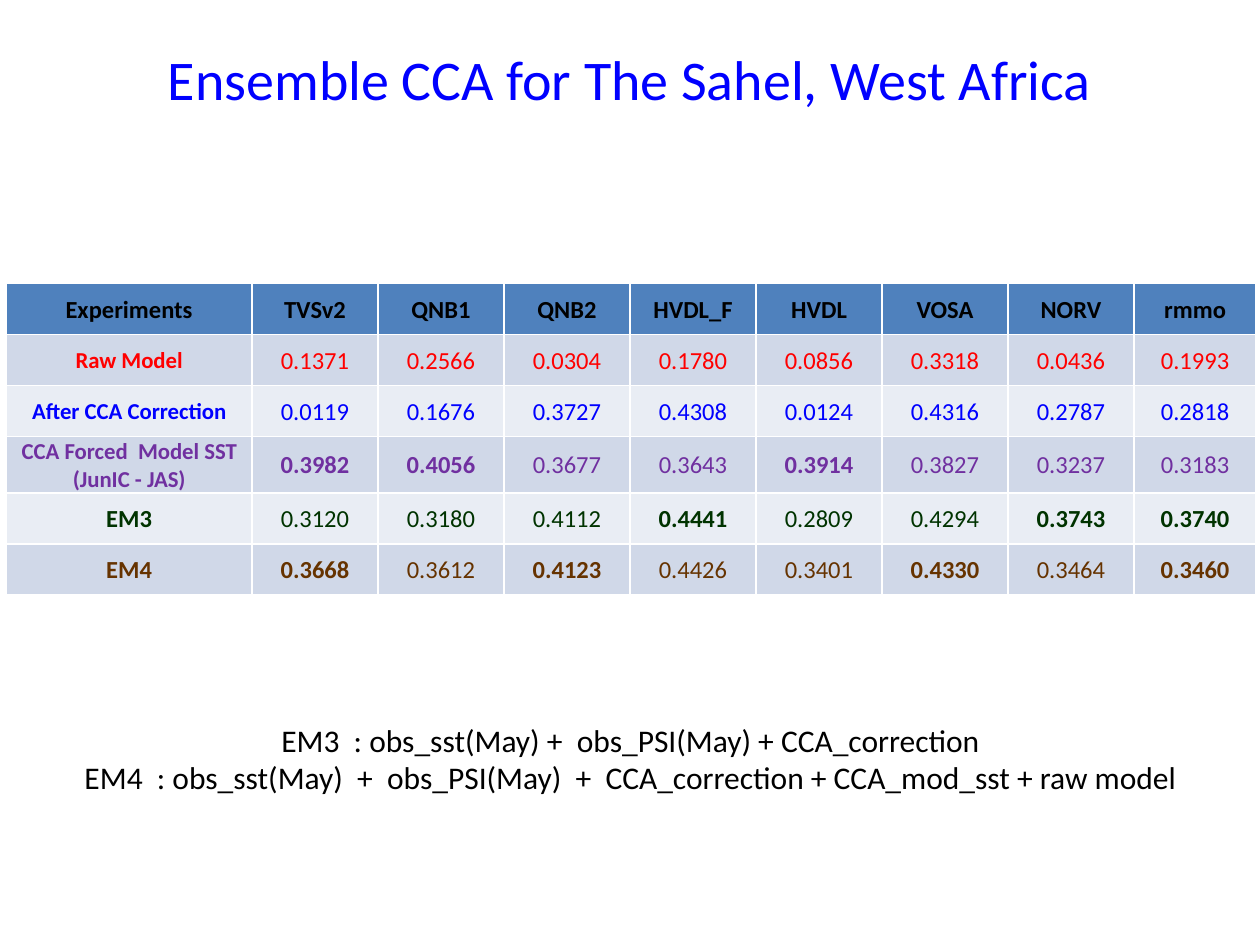
"""Build the Sahel ensemble CCA slide with its table of skill scores."""
from lxml.etree import SubElement
from pptx import Presentation
from pptx.dml.color import RGBColor as Color
from pptx.enum.text import MSO_ANCHOR as Anchor, MSO_AUTO_SIZE as AutoSize, PP_ALIGN as Align
from pptx.oxml.ns import qn
from pptx.util import Inches, Pt

COLORS = {
    "black": "000000", "blue": "0000FF", "red": "FF0000", "purple": "7030A0",
    "green": "003300", "brown": "663300", "white": "FFFFFF",
    "header": "4F81BD", "dark band": "D0D8E8", "light band": "E9EDF4",
}
TITLE = "Ensemble CCA for The Sahel, West Africa"
HEADERS = ["Experiments", "TVSv2", "QNB1", "QNB2", "HVDL_F", "HVDL", "VOSA", "NORV", "rmmo"]
EXPERIMENTS = [
    ("Raw Model", 13, "red", (),
     ["0.1371", "0.2566", "0.0304", "0.1780", "0.0856", "0.3318", "0.0436", "0.1993"]),
    ("After CCA Correction", 13, "blue", (),
     ["0.0119", "0.1676", "0.3727", "0.4308", "0.0124", "0.4316", "0.2787", "0.2818"]),
    ("CCA Forced  Model SST (JunIC - JAS)", 13, "purple", ("TVSv2", "QNB1", "HVDL"),
     ["0.3982", "0.4056", "0.3677", "0.3643", "0.3914", "0.3827", "0.3237", "0.3183"]),
    ("EM3", 14, "green", ("HVDL_F", "NORV", "rmmo"),
     ["0.3120", "0.3180", "0.4112", "0.4441", "0.2809", "0.4294", "0.3743", "0.3740"]),
    ("EM4", 14, "brown", ("TVSv2", "QNB2", "VOSA", "rmmo"),
     ["0.3668", "0.3612", "0.4123", "0.4426", "0.3401", "0.4330", "0.3464", "0.3460"]),
]
DEFINITIONS = [
    "EM3  : obs_sst(May) +  obs_PSI(May) + CCA_correction",
    "EM4  : obs_sst(May)  +  obs_PSI(May)  +  CCA_correction + CCA_mod_sst + raw model",
]
COLUMN_WIDTHS = [1.95] + [1] * 7 + [0.97]
TABLE_HEIGHT = 2.43


def write(frame, lines, size=14, color="black", bold=False):
    for index, line in enumerate(lines):
        para = frame.paragraphs[0] if index == 0 else frame.add_paragraph()
        para.alignment = Align.CENTER
        span = para.add_run()
        span.text = line
        span.font.name = "Calibri"
        span.font.size = Pt(size)
        span.font.bold = bold
        span.font.color.rgb = Color.from_string(COLORS[color])


def style_cell(cell, fill):
    cell.vertical_anchor = Anchor.MIDDLE
    cell.margin_left = cell.margin_right = cell.margin_top = Inches(0.01)
    cell.margin_bottom = 0
    properties = cell._tc.get_or_add_tcPr()
    for side in "LRTB":
        border = SubElement(properties, qn(f"a:ln{side}"), w=str(Pt(1)))
        paint = SubElement(border, qn("a:solidFill"))
        SubElement(paint, qn("a:srgbClr"), val=COLORS["white"])
    cell.fill.solid()
    cell.fill.fore_color.rgb = Color.from_string(COLORS[fill])


def add_scores(page):
    row_count = len(EXPERIMENTS) + 1
    table = page.shapes.add_table(
        row_count, len(HEADERS), Inches(0.05), Inches(2.25),
        Inches(sum(COLUMN_WIDTHS)), Inches(TABLE_HEIGHT)).table
    for column, width in zip(table.columns, COLUMN_WIDTHS):
        column.width = Inches(width)
    for column, header in enumerate(HEADERS):
        cell = table.cell(0, column)
        style_cell(cell, "header")
        write(cell.text_frame, [header], bold=True)
    for row, (label, label_size, color, best, scores) in enumerate(EXPERIMENTS, 1):
        for column, text in enumerate([label] + scores):
            cell = table.cell(row, column)
            style_cell(cell, "dark band" if row % 2 else "light band")
            write(cell.text_frame, [text], size=14 if column else label_size, color=color,
                  bold=column == 0 or HEADERS[column] in best)


def main():
    deck = Presentation()
    deck.slide_width, deck.slide_height = Inches(10), Inches(7.5)
    page = deck.slides.add_slide(deck.slide_layouts[5])
    add_scores(page)

    box = page.shapes.add_textbox(Inches(0.42), Inches(5.67), Inches(9.17), Inches(0.71))
    box.text_frame.word_wrap = True
    box.text_frame.auto_size = AutoSize.SHAPE_TO_FIT_TEXT
    write(box.text_frame, DEFINITIONS, size=18)

    title = page.shapes.title
    title.left, title.top = Inches(0.5), Inches(0.3)
    title.width, title.height = Inches(9), Inches(1.25)
    title.text_frame.vertical_anchor = Anchor.TOP
    write(title.text_frame, [TITLE], size=32, color="blue")

    deck.save("out.pptx")


if __name__ == "__main__":
    main()
